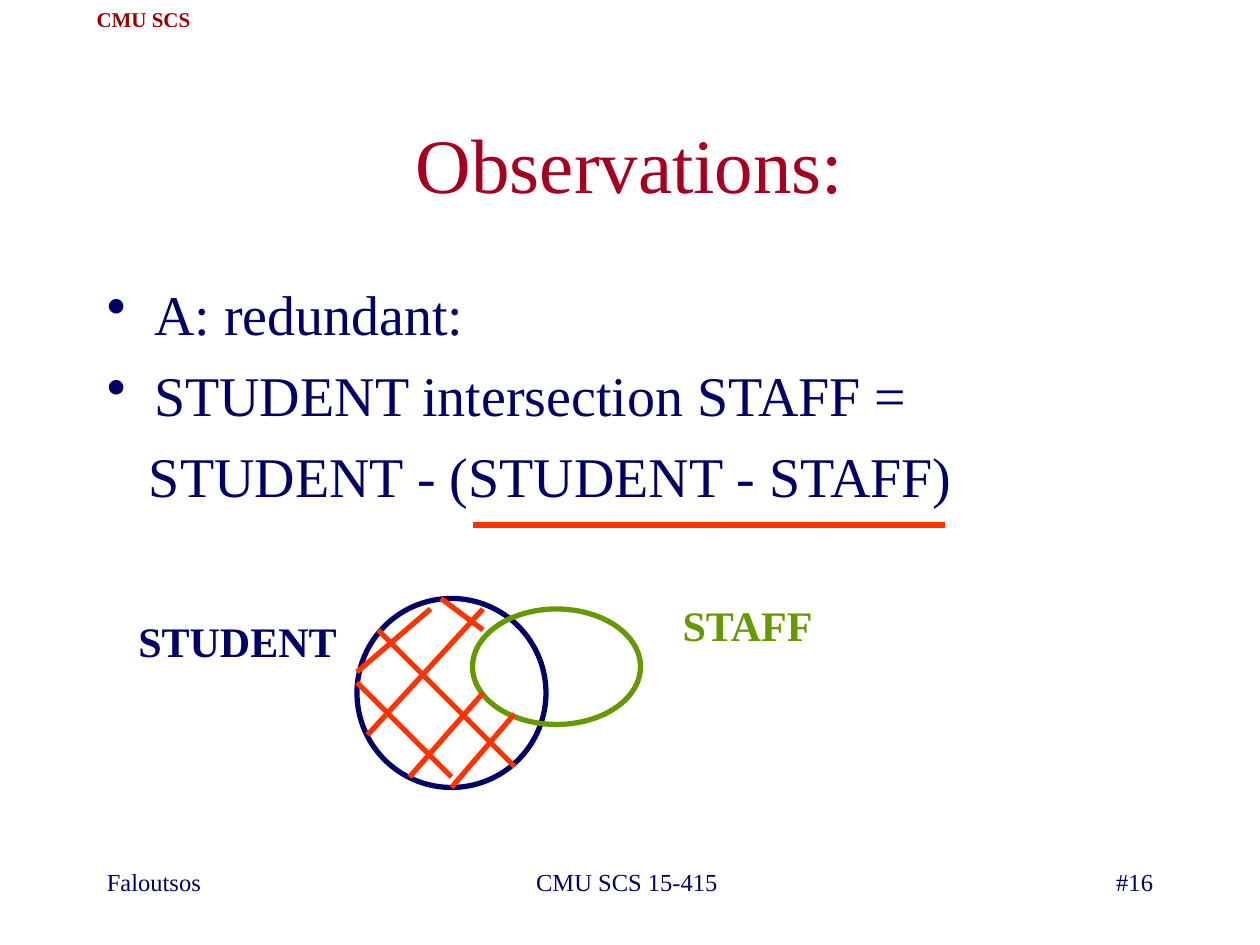
from dataclasses import dataclass

from lxml import etree
from pptx import Presentation
from pptx.dml.color import RGBColor
from pptx.enum.shapes import MSO_CONNECTOR, MSO_SHAPE
from pptx.enum.text import MSO_ANCHOR, PP_ALIGN
from pptx.oxml.ns import qn
from pptx.slide import Slide
from pptx.util import Pt

LEFT, MID, RIGHT = PP_ALIGN.LEFT, PP_ALIGN.CENTER, PP_ALIGN.RIGHT
TOP, HALF = MSO_ANCHOR.TOP, MSO_ANCHOR.MIDDLE
OVAL, LINE = MSO_SHAPE.OVAL, MSO_CONNECTOR.STRAIGHT
FONT = "Times New Roman"
NAVY, GREEN, RED, WINE, RUST = "000066", "669900", "FF3300", "A50021", "990000"


@dataclass
class Para:
    text: str
    gap: float = 0
    left: float = 0
    hang: float = 0


@dataclass
class Box:
    at: tuple[float, float, float, float]
    paras: list[Para]
    size: float
    ink: str = NAVY
    bold: bool = False
    align: PP_ALIGN = LEFT
    anchor: MSO_ANCHOR = TOP
    wrap: bool = True


@dataclass
class Ring:
    at: tuple[float, float, float, float]
    ink: str


@dataclass
class Stroke:
    start: tuple[float, float]
    end: tuple[float, float]


BOXES = [
    Box((48, 0, 68, 21.6), [Para("CMU SCS")], 12, RUST, True, MID, HALF, False),
    Box((54, 492, 150, 36), [Para("Faloutsos")], 14),
    Box((246, 492, 228, 36), [Para("CMU SCS 15-415 ")], 14, align=MID),
    Box((516, 492, 150, 36), [Para("#16")], 14, align=RIGHT),
    Box((54, 48, 612, 90), [Para("Observations:")], 44, WINE, align=MID, anchor=HALF),
    Box((54, 156, 636, 150), [
        Para("A: redundant:", 0, 27, 27),
        Para("STUDENT intersection STAFF =", 8, 27, 27),
        Para("STUDENT - (STUDENT - STAFF)", 8, 24),
    ], 32),
    Box((72, 348, 128, 36), [Para("STUDENT")], 24, bold=True, wrap=False),
    Box((383, 339, 91, 36), [Para("STAFF")], 24, GREEN, True, wrap=False),
]

RINGS = [
    Ring((204, 342, 108, 108), NAVY),
    Ring((270, 348, 96, 66), GREEN),
]

STROKES = [
    Stroke((270, 300), (540, 300)),
    Stroke((246, 348), (204, 384)),
    Stroke((276, 348), (210, 420)),
    Stroke((276, 396), (234, 444)),
    Stroke((294, 408), (258, 450)),
    Stroke((204, 390), (258, 444)),
    Stroke((216, 360), (294, 438)),
    Stroke((252, 342), (276, 360)),
]


def paint(part, ink: str) -> None:
    part.rgb = RGBColor.from_string(ink)


def indent(para, left: float, hang: float) -> None:
    props = para._p.get_or_add_pPr()
    props.set("marL", str(Pt(left)))
    props.set("indent", str(-Pt(hang)))
    if hang:
        etree.SubElement(props, qn("a:buChar")).set("char", "•")


def write(slide: Slide, box: Box) -> None:
    frame = slide.shapes.add_textbox(*map(Pt, box.at)).text_frame
    frame.word_wrap = box.wrap
    frame.vertical_anchor = box.anchor
    for rank, item in enumerate(box.paras):
        para = frame.add_paragraph() if rank else frame.paragraphs[0]
        para.alignment = box.align
        para.space_before = Pt(item.gap)
        indent(para, item.left, item.hang)
        run = para.add_run()
        run.text = item.text
        run.font.name = FONT
        run.font.size = Pt(box.size)
        run.font.bold = box.bold
        paint(run.font.color, box.ink)


def circle(slide: Slide, ring: Ring) -> None:
    shape = slide.shapes.add_shape(OVAL, *map(Pt, ring.at))
    shape.shadow.inherit = False
    shape.fill.background()
    shape.line.width = Pt(3)
    paint(shape.line.color, ring.ink)


def rule(slide: Slide, stroke: Stroke) -> None:
    line = slide.shapes.add_connector(LINE, *map(Pt, stroke.start + stroke.end))
    line.line.width = Pt(3)
    paint(line.line.color, RED)
    etree.SubElement(line._element.spPr, qn("a:effectLst"))


def main() -> None:
    deck = Presentation()
    deck.slide_width, deck.slide_height = Pt(720), Pt(540)
    slide = deck.slides.add_slide(deck.slide_layouts[6])
    for box in BOXES:
        write(slide, box)
    for ring in RINGS:
        circle(slide, ring)
    for stroke in STROKES:
        rule(slide, stroke)
    deck.save("out.pptx")


if __name__ == "__main__":
    main()
